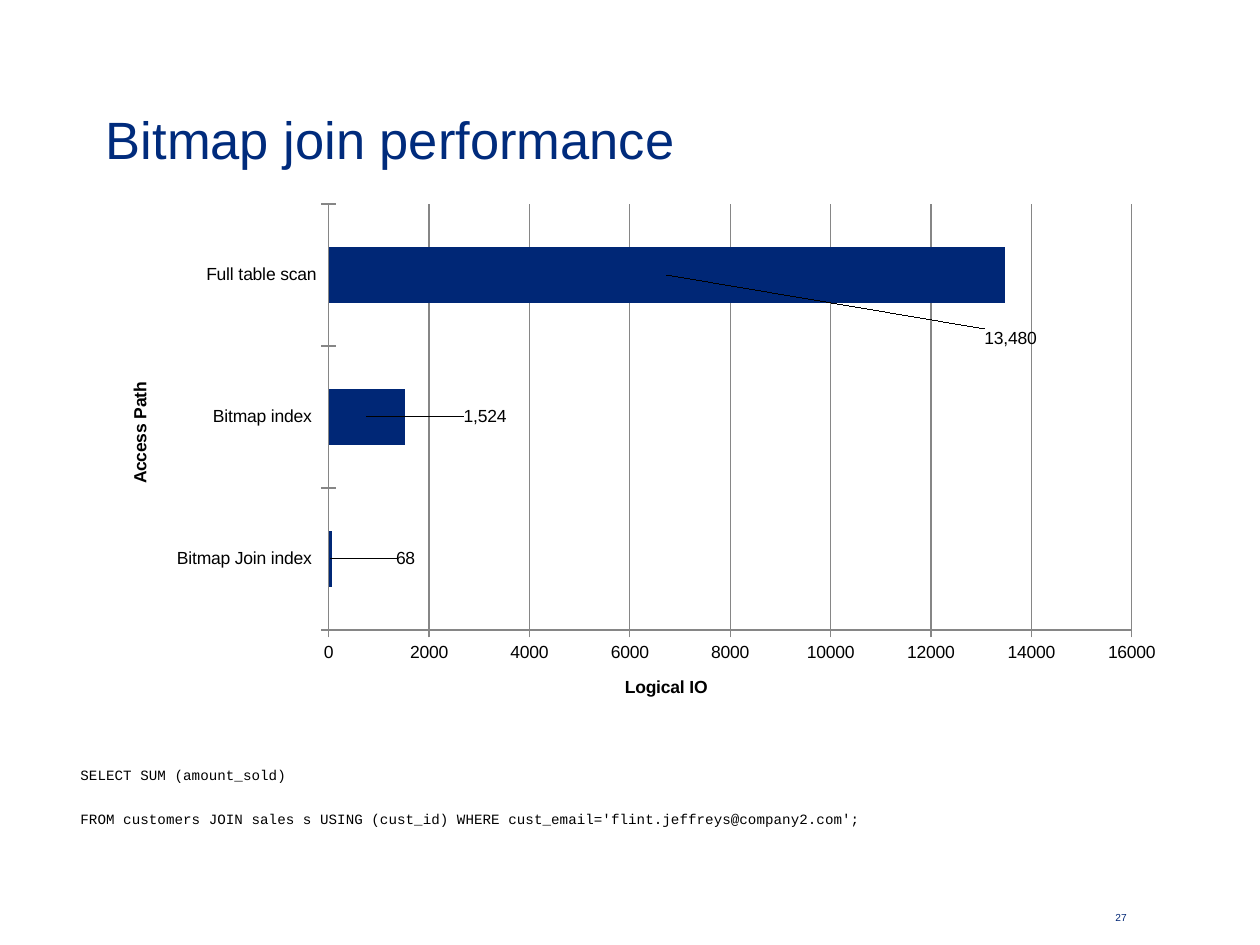
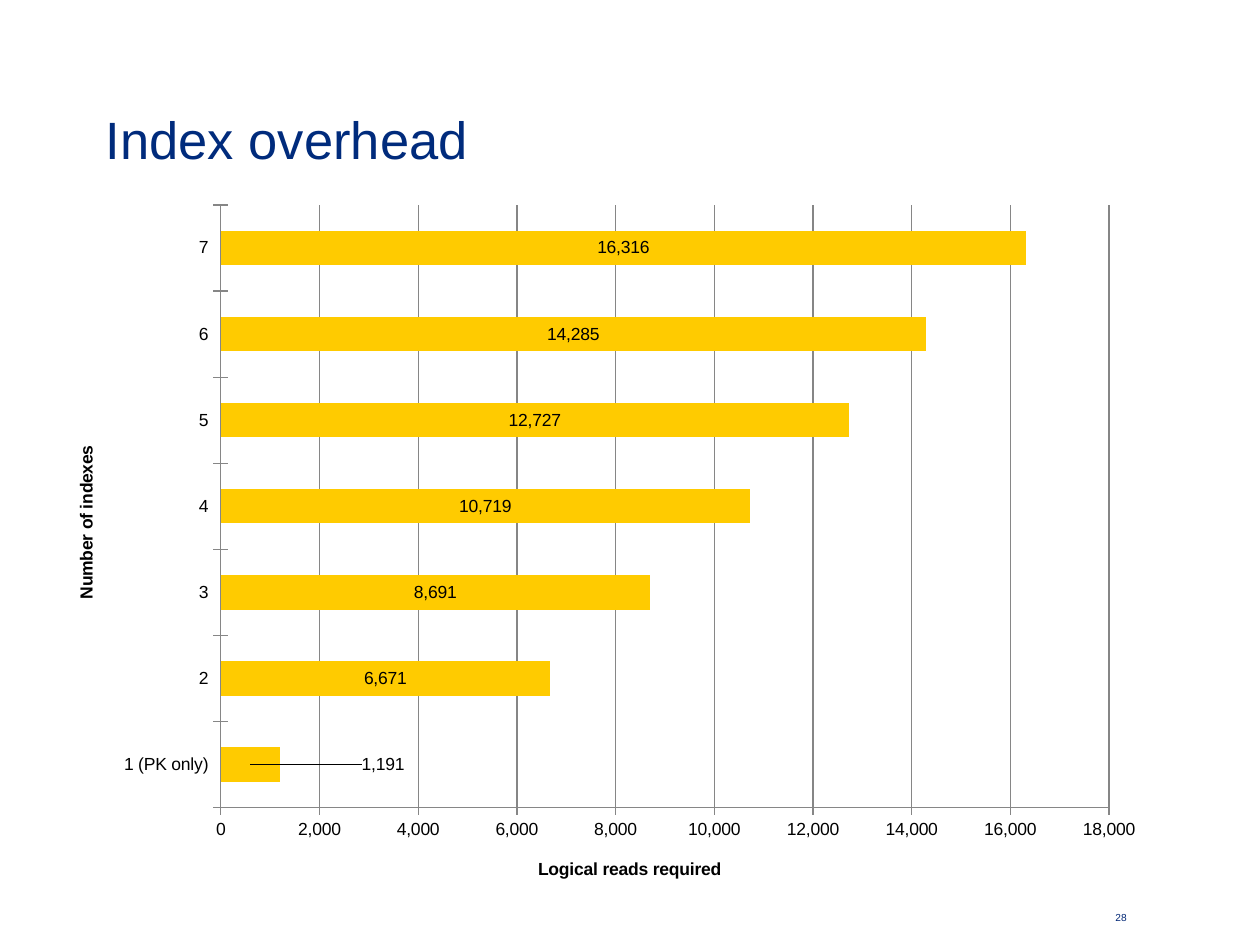
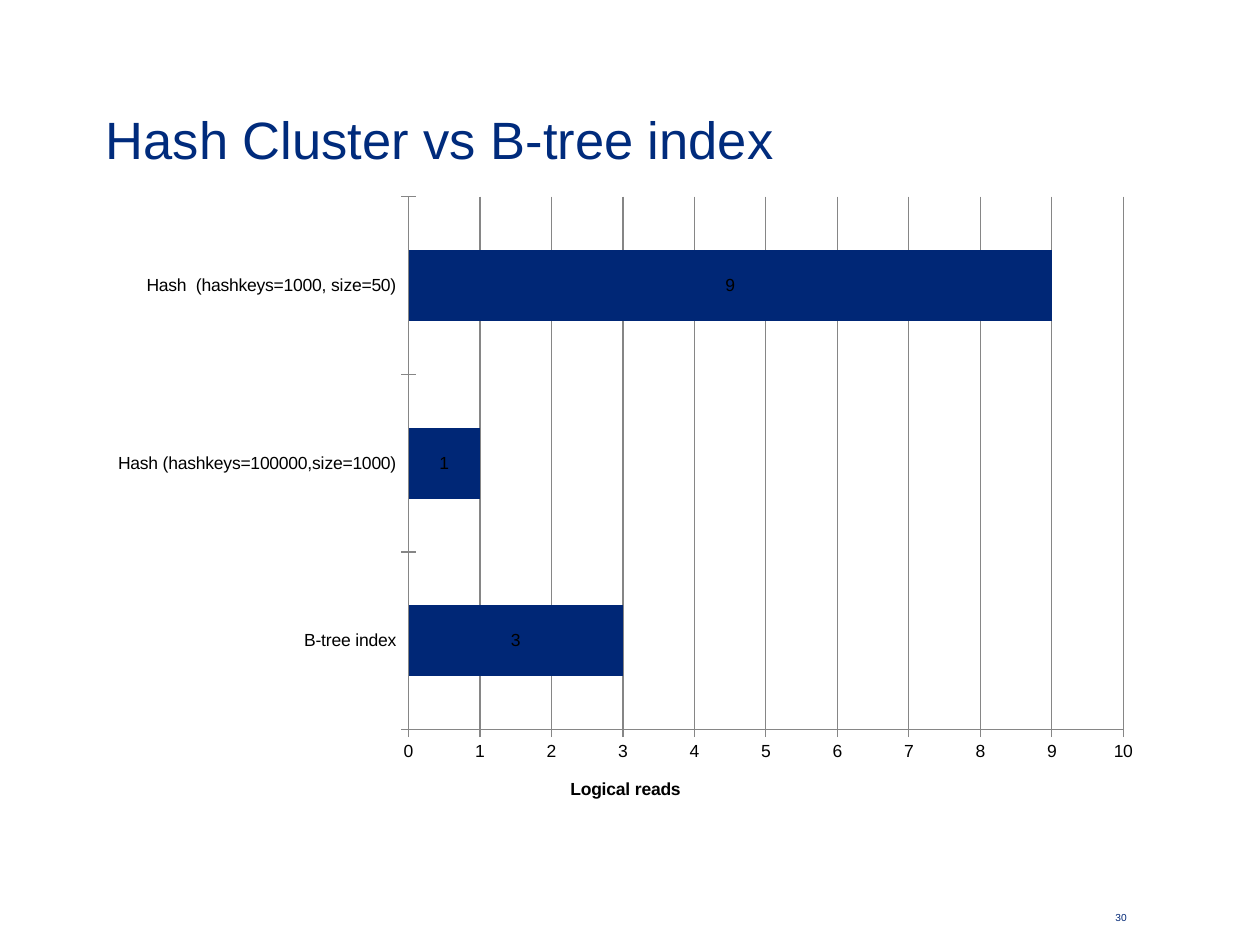
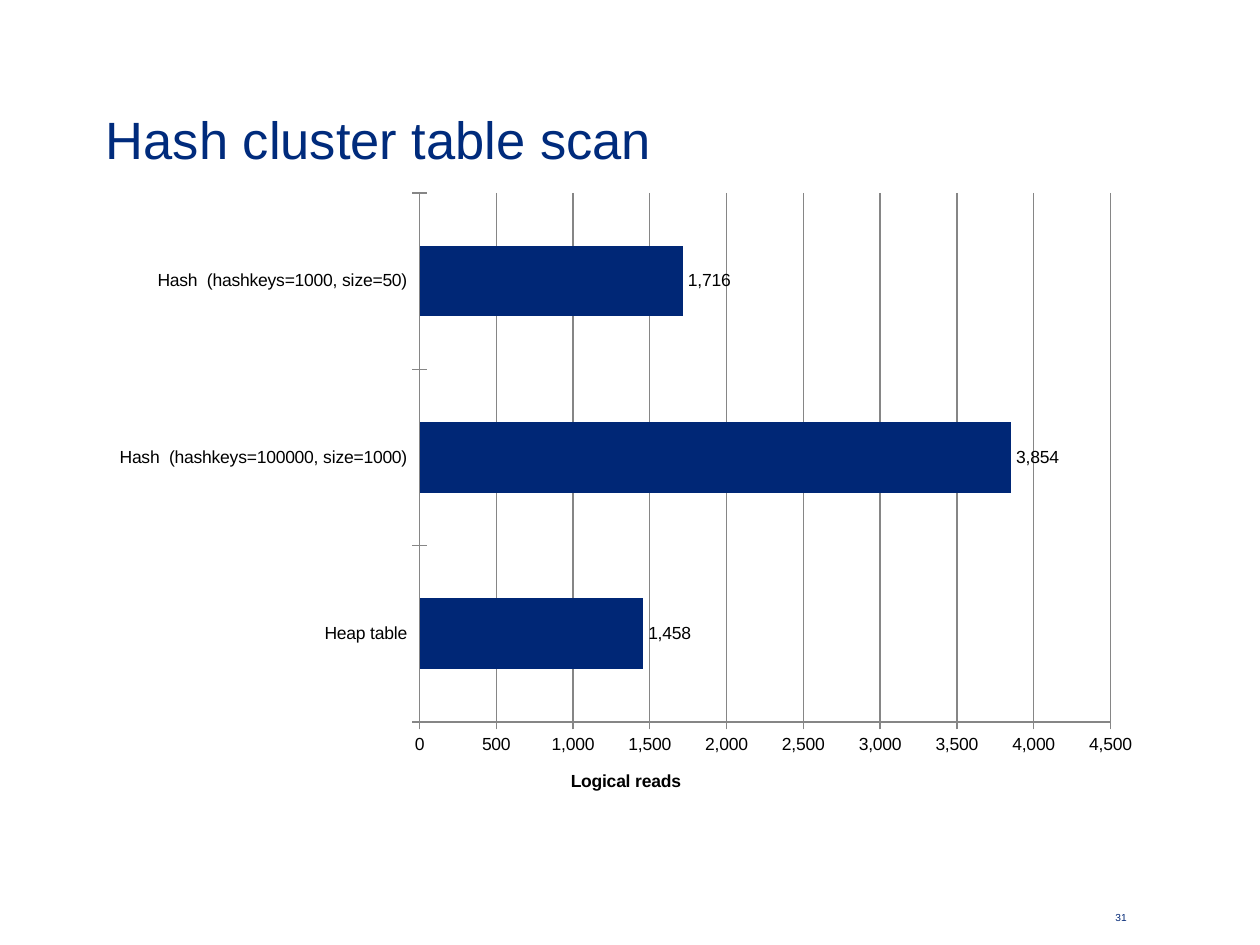
from lxml import etree
from pptx import Presentation
from pptx.chart.data import CategoryChartData
from pptx.dml.color import RGBColor
from pptx.enum.chart import XL_CHART_TYPE as ChartType
from pptx.enum.chart import XL_LABEL_POSITION as LabelPosition
from pptx.enum.chart import XL_TICK_MARK as TickMark
from pptx.enum.text import MSO_ANCHOR as Anchor
from pptx.enum.text import PP_ALIGN as Align
from pptx.oxml.ns import qn
from pptx.util import Inches, Pt

# Shared style
NAVY, TITLE_BLUE, YELLOW = "002776", "002B7C", "FFCB00"
BLACK, GRAY = "000000", "868686"
THOUSANDS = "#,##0"


def style(font, size, color, name="Arial", bold=False):
    font.size = Pt(size)
    font.name = name
    font.bold = bold
    font.color.rgb = RGBColor.from_string(color)


def add_layout(parent, index, **values):
    """Insert a manual chart layout as the child at the given position."""
    for old in parent.findall(qn("c:layout")):
        parent.remove(old)
    layout = etree.Element(qn("c:layout"))
    parent.insert(index, layout)
    manual = etree.SubElement(layout, qn("c:manualLayout"))
    for tag, value in values.items():
        etree.SubElement(manual, qn("c:" + tag)).set("val", str(value))


# Slide content: frame and plot are left, top, width, height in inches;
# label_shifts are fractions of the chart size, by point
slides = [
    dict(number=27, title="Bitmap join performance", kind=ChartType.BAR_STACKED,
         frame=(0.82, 1.54, 8.52, 4.21), plot=(2.61, 1.62, 6.37, 3.38),
         color=NAVY, category_title="Access Path", value_title="Logical IO",
         axis_format="General", label_format=THOUSANDS,
         points={"Bitmap Join index ": 68, "Bitmap index ": 1524,
                 "Full table scan": 13480},
         label_shifts={0: (0.07, 0), 1: (0.11, 0), 2: (0.32, 0.12)}),
    dict(number=28, title="Index overhead", kind=ChartType.BAR_STACKED,
         frame=(0.39, 1.52, 8.79, 5.66), plot=(1.75, 1.63, 7.05, 4.78),
         color=YELLOW, category_title="Number of indexes",
         value_title="Logical reads required",
         axis_format=THOUSANDS, label_format=THOUSANDS,
         points={"1 (PK only)": 1191, "2": 6671, "3": 8691, "4": 10719,
                 "5": 12727, "6": 14285, "7": 16316},
         label_shifts={0: (0.12, 0)}),
    dict(number=30, title="Hash Cluster vs B-tree index", kind=ChartType.BAR_STACKED,
         frame=(0.77, 1.46, 8.38, 5.09), plot=(3.24, 1.56, 5.67, 4.23),
         color=NAVY, category_title=None, value_title="Logical reads",
         axis_format="General", label_format="General",
         points={"B-tree index": 3, "Hash (hashkeys=100000,size=1000)": 1,
                 "Hash  (hashkeys=1000, size=50)": 9},
         label_shifts={}),
    dict(number=31, title="Hash cluster table scan", kind=ChartType.BAR_CLUSTERED,
         frame=(0.78, 1.43, 8.36, 5.06), plot=(3.33, 1.53, 5.48, 4.2),
         color=NAVY, category_title=None, value_title="Logical reads",
         axis_format=THOUSANDS, label_format=THOUSANDS,
         points={"Heap table": 1458, "Hash  (hashkeys=100000, size=1000)": 3854,
                 "Hash  (hashkeys=1000, size=50)": 1716},
         label_shifts={}),
]
query = [
    "SELECT SUM (amount_sold)",
    "FROM customers JOIN sales s USING (cust_id) "
    "WHERE cust_email='flint.jeffreys@company2.com';",
]

deck = Presentation()
deck.slide_width, deck.slide_height = Inches(10), Inches(7.5)

for content in slides:
    page = deck.slides.add_slide(deck.slide_layouts[5])

    # Title
    title = page.shapes.title
    title.left, title.top = Inches(0.74), Inches(0.8)
    title.width, title.height = Inches(8.51), Inches(0.6)
    title.text_frame.text = content["title"]
    title.text_frame.vertical_anchor = Anchor.MIDDLE
    title.text_frame.paragraphs[0].alignment = Align.LEFT
    style(title.text_frame.paragraphs[0].runs[0].font, 30, TITLE_BLUE)

    # Text boxes: page number, and the query on the first slide
    boxes = [((8.43, 7.03, 0.61, 0.27), [str(content["number"])],
              10, NAVY, "Arial", Align.RIGHT)]
    if page is deck.slides[0] or content is slides[0]:
        boxes.append(((0.54, 5.81, 6.39, 0.81), query,
                      14, BLACK, "Courier New", Align.LEFT))
    for place, lines, size, color, face, alignment in boxes:
        box = page.shapes.add_textbox(*map(Inches, place))
        frame = box.text_frame
        frame.word_wrap = True
        frame.margin_top = Inches(0.05) + Pt(size * 0.45)
        frame.text = "\n".join(lines)
        for position, para in enumerate(frame.paragraphs):
            para.alignment = alignment
            if position:
                para.space_before = Pt(size * 0.45)
            span = para.runs[0]
            style(span.font, size, color, face)
            # Lowered, reduced text
            span._r.get_or_add_rPr().set("baseline", "-25000")

    # Chart
    data = CategoryChartData()
    data.categories = list(content["points"])
    data.add_series("Series 1", list(content["points"].values()))
    left, top, width, height = content["frame"]
    chart = page.shapes.add_chart(
        content["kind"], *map(Inches, content["frame"]), data).chart
    style(chart.font, 10, BLACK)
    chart.has_legend = False
    chart.has_title = False
    plot_left, plot_top, plot_width, plot_height = content["plot"]
    add_layout(chart._chartSpace.chart.plotArea, 0,
               layoutTarget="inner", xMode="edge", yMode="edge",
               x=round((plot_left - left) / width, 3),
               y=round((plot_top - top) / height, 3),
               w=round(plot_width / width, 3), h=round(plot_height / height, 3))

    # Bars
    plot = chart.plots[0]
    plot.gap_width = 150
    plot.vary_by_categories = False
    series = plot.series[0]
    series.format.fill.solid()
    series.format.fill.fore_color.rgb = RGBColor.from_string(content["color"])

    # Axes
    for axis, text in ((chart.category_axis, content["category_title"]),
                       (chart.value_axis, content["value_title"])):
        axis.major_tick_mark = TickMark.CROSS
        axis.format.line.color.rgb = RGBColor.from_string(GRAY)
        axis.format.line.width = Pt(0.75)
        axis.has_title = text is not None
        if text:
            axis.axis_title.text_frame.text = text
            span = axis.axis_title.text_frame.paragraphs[0].runs[0]
            style(span.font, 10, BLACK, bold=True)
    chart.value_axis.has_major_gridlines = True
    grid_line = chart.value_axis.major_gridlines.format.line
    grid_line.color.rgb = RGBColor.from_string(GRAY)
    grid_line.width = Pt(0.75)
    chart.value_axis.tick_labels.number_format = content["axis_format"]
    chart.value_axis.tick_labels.number_format_is_linked = False

    # Value labels, some moved away from their bars
    labels = series.data_labels
    labels.show_value = True
    labels.number_format = content["label_format"]
    labels.number_format_is_linked = False
    labels.position = (LabelPosition.OUTSIDE_END
                       if content["kind"] == ChartType.BAR_CLUSTERED
                       else LabelPosition.CENTER)
    style(labels.font, 10, BLACK)
    for point, (shift_x, shift_y) in content["label_shifts"].items():
        style(series.points[point].data_label.font, 10, BLACK)
        label = labels._element.findall(qn("c:dLbl"))[-1]
        add_layout(label, 1, x=shift_x, y=shift_y)
        number_format = etree.Element(
            qn("c:numFmt"), formatCode=THOUSANDS, sourceLinked="0")
        label.insert(2, number_format)

deck.save("out.pptx")
